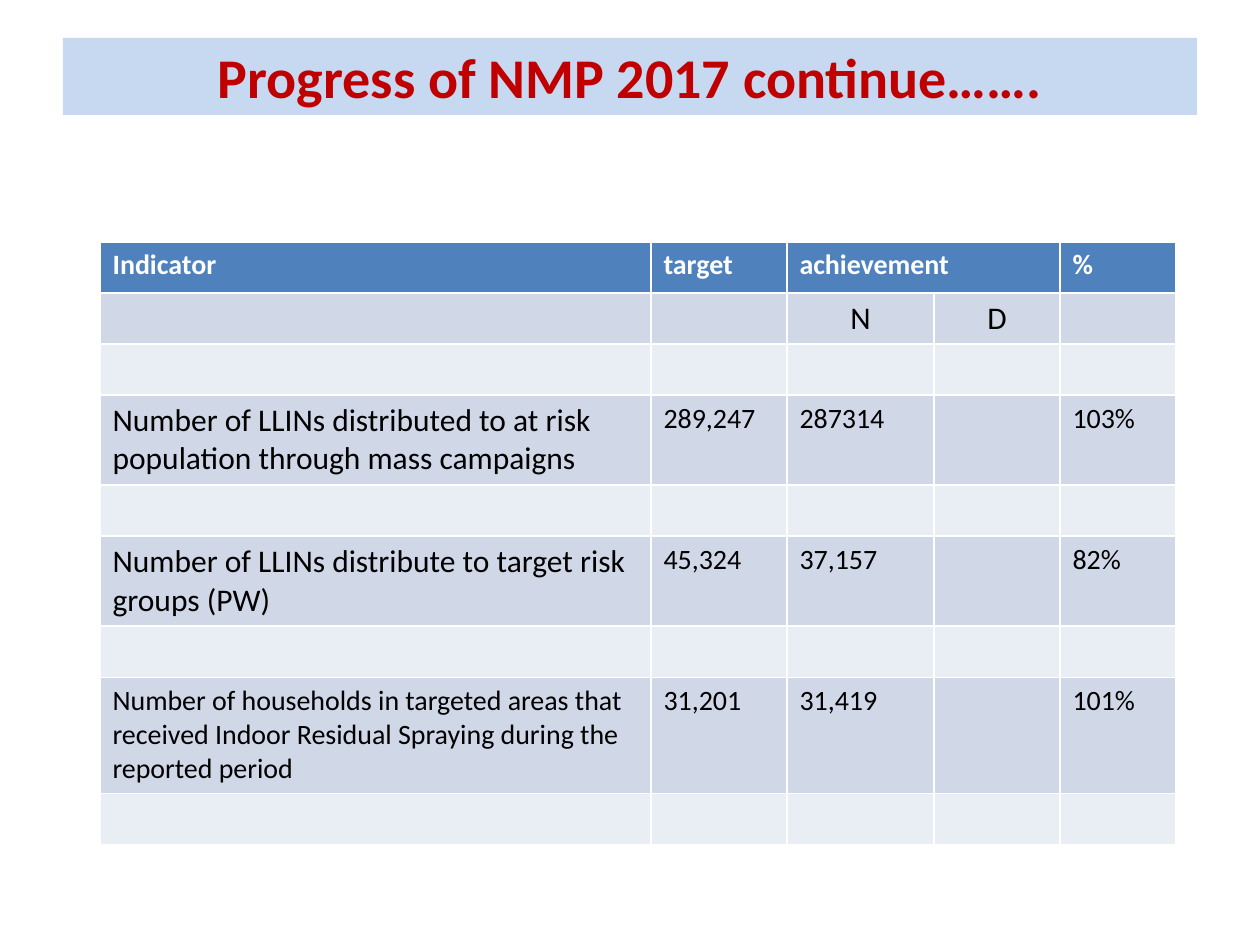
from pptx import Presentation
from pptx.dml.color import RGBColor
from pptx.enum.shapes import MSO_SHAPE
from pptx.enum.text import MSO_ANCHOR, PP_ALIGN
from pptx.util import Emu, Pt

RECT = MSO_SHAPE.RECTANGLE
MIDDLE = MSO_ANCHOR.MIDDLE
LEFT, CENTER = PP_ALIGN.LEFT, PP_ALIGN.CENTER

PX_PER_INCH = 126
FONT = "Calibri"
COLORS = {
    "title_band": "C6D9F1",
    "title": "C00000",
    "header": "4F81BD",
    "header_text": "FFFFFF",
    "odd_row": "D0D8E8",
    "even_row": "E9EDF4",
    "text": "000000",
}

COLUMN_WIDTHS = [551, 136, 147, 126, 116]
ROW_HEIGHTS = [51, 51, 51, 90, 51, 90, 51, 116, 51]
HEADERS = ["Indicator", "target", "achievement", "", "%"]
SUBHEADERS = ["", "", "N", "D", ""]
# Table row: (size of the indicator text, cell texts)
INDICATORS = {
    3: (18, ["Number of LLINs distributed to at risk population through mass campaigns",
             "289,247", "287314", "", "103%"]),
    5: (18, ["Number of LLINs distribute to target risk groups (PW)",
             "45,324", "37,157", "", "82%"]),
    7: (16, ["Number of households in targeted areas that received "
             "Indoor Residual Spraying during the reported period",
             "31,201", "31,419", "", "101%"]),
}


def px(n):
    return Emu(round(n * 914400 / PX_PER_INCH))


def rgb(name):
    return RGBColor.from_string(COLORS[name])


def paint(obj, color):
    obj.fill.solid()
    obj.fill.fore_color.rgb = rgb(color)


def write(tf, text, size, color, bold=False, align=LEFT):
    p = tf.paragraphs[0]
    p.text = text
    p.alignment = align
    for r in p.runs:
        r.font.name = FONT
        r.font.size = Pt(size)
        r.font.bold = bold
        r.font.color.rgb = rgb(color)


def add_title(slide, text):
    sp = slide.shapes.add_shape(RECT, px(63), px(38), px(1134), px(77))
    sp.shadow.inherit = False
    paint(sp, "title_band")
    sp.line.fill.background()
    tf = sp.text_frame
    tf.word_wrap = True
    tf.vertical_anchor = MIDDLE
    write(tf, text, 32, "title", bold=True, align=CENTER)


def fill_row(table, row, texts, sizes, fill, color="text", bold=False, align=LEFT):
    for col, (text, size) in enumerate(zip(texts, sizes)):
        cell = table.cell(row, col)
        paint(cell, fill)
        if text:
            write(cell.text_frame, text, size, color, bold, align)


def add_progress_table(slide):
    n_rows, n_cols = len(ROW_HEIGHTS), len(COLUMN_WIDTHS)
    table = slide.shapes.add_table(
        n_rows, n_cols, px(100), px(242),
        px(sum(COLUMN_WIDTHS)), px(sum(ROW_HEIGHTS))).table
    for column, width in zip(table.columns, COLUMN_WIDTHS):
        column.width = px(width)
    for row, height in zip(table.rows, ROW_HEIGHTS):
        row.height = px(height)

    fill_row(table, 0, HEADERS, [16] * n_cols, "header", "header_text", bold=True)
    table.cell(0, 2).merge(table.cell(0, 3))
    fill_row(table, 1, SUBHEADERS, [18] * n_cols, "odd_row", align=CENTER)
    for row in range(2, n_rows):
        size, texts = INDICATORS.get(row, (18, [""] * n_cols))
        fill = "odd_row" if row % 2 else "even_row"
        fill_row(table, row, texts, [size] + [16] * (n_cols - 1), fill)


def main():
    prs = Presentation()
    prs.slide_width, prs.slide_height = px(1260), px(945)
    slide = prs.slides.add_slide(prs.slide_layouts[6])
    add_title(slide, "Progress of NMP 2017 continue…….")
    add_progress_table(slide)
    prs.save("out.pptx")


if __name__ == "__main__":
    main()
